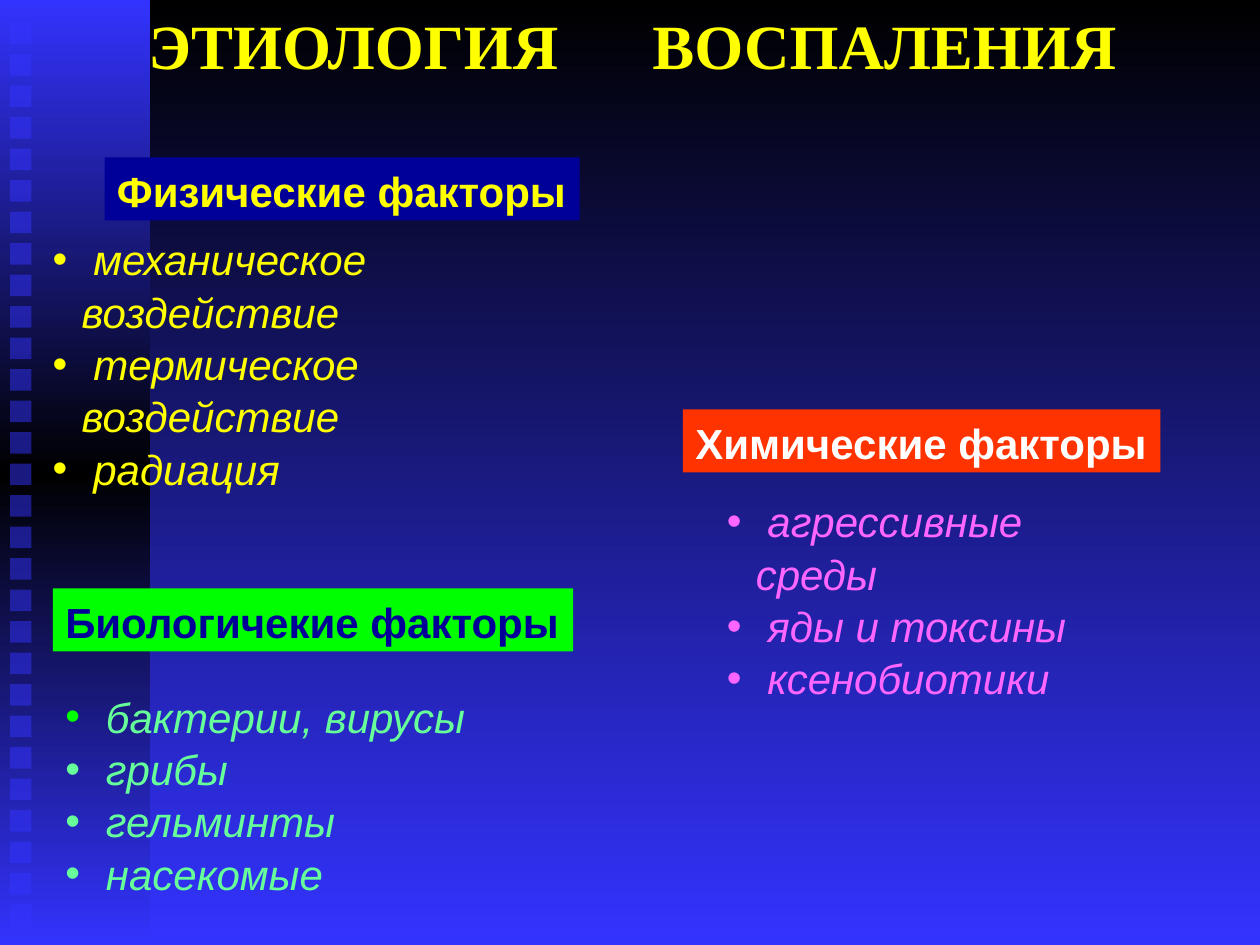
from copy import deepcopy
from dataclasses import dataclass

from lxml import etree
from pptx import Presentation
from pptx import util as u
from pptx.dml.color import RGBColor
from pptx.enum import shapes, text
from pptx.oxml.ns import qn

PX = 9144
BLACK = RGBColor(0x00, 0x00, 0x00)
WHITE = RGBColor(0xFF, 0xFF, 0xFF)
BLUE = RGBColor(0x33, 0x33, 0xFF)
NAVY = RGBColor(0x00, 0x00, 0x99)
YELLOW = RGBColor(0xFF, 0xFF, 0x00)
GREEN = RGBColor(0x00, 0xFF, 0x00)
MINT = RGBColor(0x66, 0xFF, 0x99)
RED = RGBColor(0xFF, 0x33, 0x00)
PINK = RGBColor(0xFF, 0x66, 0xFF)


@dataclass(frozen=True)
class Box:
    x: int
    y: int
    w: int
    h: int

    def emu(self) -> tuple:
        return tuple(n * PX for n in (self.x, self.y, self.w, self.h))


@dataclass(frozen=True)
class Factor:
    title: str
    label: Box
    fill: RGBColor
    ink: RGBColor
    body: Box
    color: RGBColor
    first_bullet: RGBColor
    items: tuple


FACTORS = (
    Factor("Биологичекие факторы", Box(42, 467, 413, 50), GREEN, NAVY,
           Box(42, 542, 342, 170), MINT, GREEN,
           ("бактерии, вирусы", "грибы", "гельминты", "насекомые")),
    Factor("Физические факторы", Box(83, 125, 377, 50), NAVY, YELLOW,
           Box(32, 179, 475, 130), YELLOW, YELLOW,
           ("механическое\vвоздействие", "термическое\vвоздействие", "радиация")),
    Factor("Химические факторы", Box(542, 325, 379, 50), RED, WHITE,
           Box(567, 387, 350, 130), PINK, PINK,
           ("агрессивные\vсреды", "яды и токсины", "ксенобиотики")),
)


def paint_gradient(fill, root, colors: list) -> None:
    fill.gradient()
    fill.gradient_angle = 270
    stops = next(root.iter(qn("a:gsLst")))
    for _ in colors[2:]:
        stops.append(deepcopy(stops[0]))
    for i, (stop, color) in enumerate(zip(fill.gradient_stops, colors)):
        stop.position = i / (len(colors) - 1)
        stop.color.rgb = color


def add_rect(s, box: Box):
    sp = s.shapes.add_shape(shapes.MSO_SHAPE.RECTANGLE, *box.emu())
    sp.shadow.inherit = False
    sp.line.fill.background()
    return sp


def style(p, size: int, color: RGBColor, font: str = "Arial",
          bold: bool = False, italic: bool = False) -> None:
    p.alignment = text.PP_ALIGN.LEFT
    for r in p.runs:
        r.font.size, r.font.name = u.Pt(size), font
        r.font.bold, r.font.italic = bold, italic
        r.font.color.rgb = color


def add_sidebar(s) -> None:
    sp = add_rect(s, Box(0, 0, 119, 750))
    paint_gradient(sp.fill, sp._element, [BLUE, BLACK, BLUE])
    for i in range(29):
        sp = add_rect(s, Box(8, 18 + 25 * i, 17, 17))
        sp.fill.solid()
        sp.fill.fore_color.rgb = BLUE
        color = next(sp._element.spPr.iter(qn("a:srgbClr")))
        etree.SubElement(color, qn("a:alpha"), val="50000")


def add_title(s) -> None:
    tf = s.shapes.add_textbox(*Box(108, 0, 799, 70).emu()).text_frame
    tf.word_wrap = True
    tf.text = "ЭТИОЛОГИЯ\tВОСПАЛЕНИЯ"
    p = tf.paragraphs[0]
    style(p, 36, YELLOW, "Times New Roman", bold=True)
    tabs = etree.SubElement(p._p.get_or_add_pPr(), qn("a:tabLst"))
    etree.SubElement(tabs, qn("a:tab"), pos=str(400 * PX), algn="l")


def add_label(s, factor: Factor) -> None:
    sp = add_rect(s, factor.label)
    sp.fill.solid()
    sp.fill.fore_color.rgb = factor.fill
    tf = sp.text_frame
    tf.word_wrap = False
    tf.vertical_anchor = text.MSO_ANCHOR.TOP
    tf.text = factor.title
    style(tf.paragraphs[0], 24, factor.ink, bold=True)
    tf.paragraphs[0].line_spacing = 1.04


def add_bullet(p, color: RGBColor) -> None:
    pPr = p._p.get_or_add_pPr()
    pPr.set("marL", str(23 * PX))
    pPr.set("indent", str(-23 * PX))
    bu = etree.SubElement(pPr, qn("a:buClr"))
    etree.SubElement(bu, qn("a:srgbClr"), val=str(color))
    etree.SubElement(pPr, qn("a:buFont"), typeface="Arial")
    etree.SubElement(pPr, qn("a:buChar"), char="•")


def add_list(s, factor: Factor) -> None:
    tf = s.shapes.add_textbox(*factor.body.emu()).text_frame
    tf.word_wrap = True
    for i, item in enumerate(factor.items):
        p = tf.add_paragraph() if i else tf.paragraphs[0]
        p.text = f" {item}"
        style(p, 24, factor.color, italic=True)
        p.line_spacing = 1.04
        add_bullet(p, factor.color if i else factor.first_bullet)


def main() -> None:
    """Build the slide on the causes of inflammation."""
    prs = Presentation()
    prs.slide_width, prs.slide_height = 1000 * PX, 750 * PX
    s = prs.slides.add_slide(prs.slide_layouts[6])
    paint_gradient(s.background.fill, s._element, [BLACK, BLUE])
    add_sidebar(s)
    add_title(s)
    for factor in FACTORS:
        add_label(s, factor)
    for factor in FACTORS:
        add_list(s, factor)
    prs.save("out.pptx")


if __name__ == "__main__":
    main()
